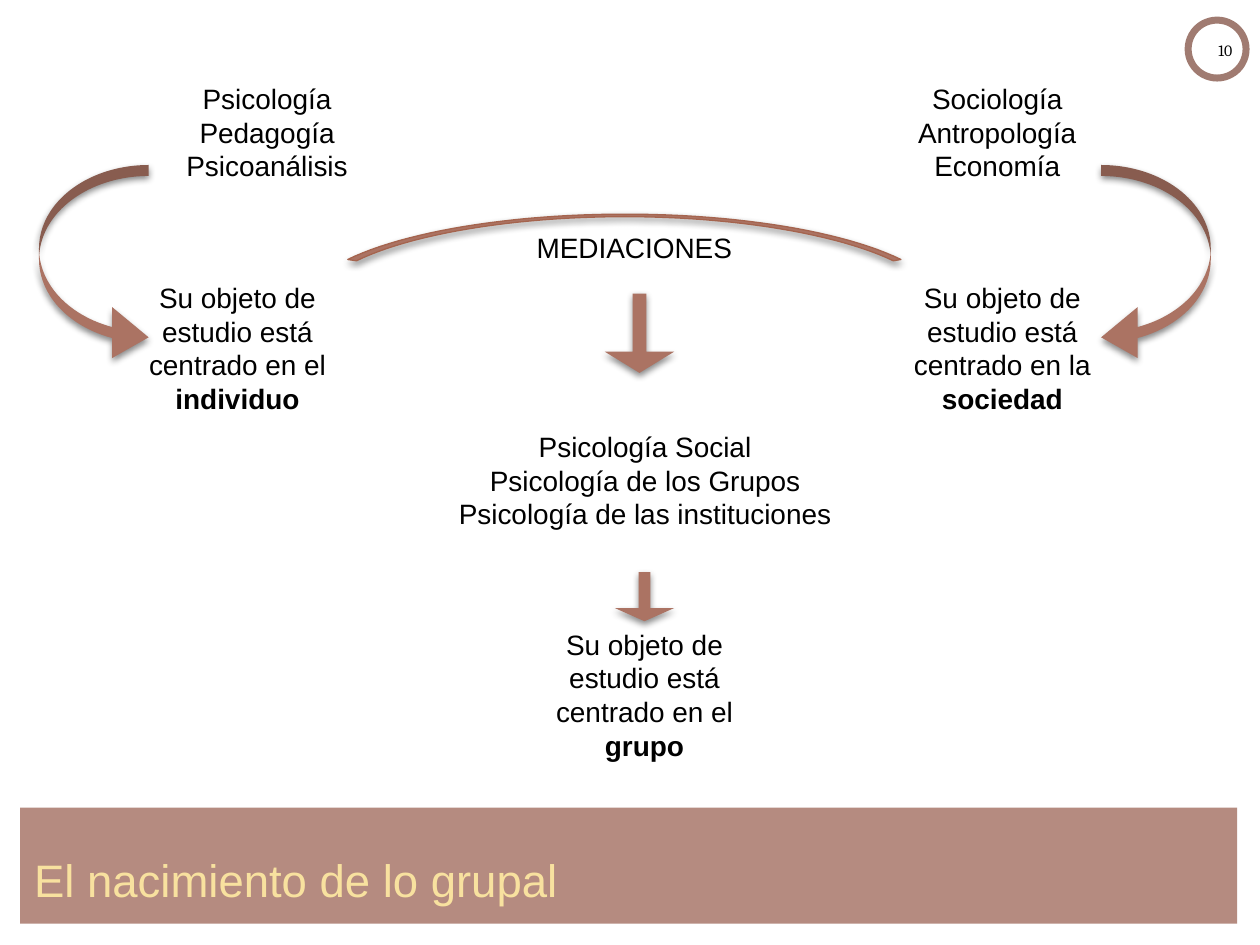
import pptx
import pptx.util
import pptx.dml.color
import pptx.enum.shapes
import pptx.enum.text
import pptx.oxml
import pptx.oxml.ns

Inches = pptx.util.Inches
Shapes = pptx.enum.shapes.MSO_SHAPE
Align = pptx.enum.text.PP_ALIGN
Anchor = pptx.enum.text.MSO_ANCHOR

CLAY, ROSE, BLACK = "AB7363", "B58B80", "000000"
SHADOW = (
    f'<a:effectLst {pptx.oxml.ns.nsdecls("a")}>'
    '<a:outerShdw blurRad="50800" dist="25400" dir="5400000" rotWithShape="0">'
    '<a:srgbClr val="000000"><a:alpha val="45000"/></a:srgbClr>'
    '</a:outerShdw></a:effectLst>'
)


def color(value):
    return pptx.dml.color.RGBColor.from_string(value)


def apply(target, values):
    for name, value in values.items():
        setattr(target, name, value)


def curve(points, steps=24):
    weights = (1, 3, 3, 1)
    for step in range(steps + 1):
        t = step / steps
        yield tuple(
            sum(w * (1 - t) ** (3 - i) * t ** i * point[axis]
                for i, (w, point) in enumerate(zip(weights, points)))
            for axis in (0, 1)
        )


class Painter:
    body = {"size": pptx.util.Pt(16), "name": "Arial"}

    def __init__(self, page):
        self.page = page

    def paint(self, shape, fill, line=None, width=0.75, shadow=False):
        shape.shadow.inherit = False
        shape.fill.solid()
        shape.fill.fore_color.rgb = color(fill)
        if line:
            shape.line.color.rgb = color(line)
            shape.line.width = pptx.util.Pt(width)
        else:
            shape.line.fill.background()
        if shadow:
            properties = shape._element.spPr
            properties.replace(
                properties.find(pptx.oxml.ns.qn("a:effectLst")),
                pptx.oxml.parse_xml(SHADOW))
        return shape

    def shape(self, kind, place, fill, **style):
        shape = self.page.shapes.add_shape(kind, *map(Inches, place))
        return self.paint(shape, fill, **style)

    def band(self, place, fill):
        band = self.shape(Shapes.RECTANGLE, place, fill)
        self.page.shapes.title._element.addprevious(band._element)

    def arrow(self, kind, place, adjustments, rotation=0, flip=False):
        arrow = self.shape(kind, place, CLAY, shadow=True)
        for index, value in enumerate(adjustments):
            arrow.adjustments[index] = value
        arrow.rotation = rotation
        if flip:
            arrow._element.spPr.xfrm.set("flipH", "1")

    def outline(self, points, fill, **style):
        corners = [tuple(map(Inches, point)) for point in points]
        builder = self.page.shapes.build_freeform(*corners[0])
        builder.add_line_segments(corners[1:], close=True)
        self.paint(builder.convert_to_shape(), fill, **style)

    def span(self, para, text, font=None, ink=BLACK, bold=False):
        span = para.add_run()
        span.text = text
        apply(span.font, {**self.body, **(font or {}), "bold": bold})
        span.font.color.rgb = color(ink)

    def text(self, place, lines, align=Align.CENTER, font=None, frame=None):
        box = self.page.shapes.add_textbox(*map(Inches, place))
        apply(box.text_frame, {"word_wrap": True, **(frame or {})})
        for number, line in enumerate(lines):
            para = box.text_frame.add_paragraph() if number else box.text_frame.paragraphs[0]
            para.alignment = align
            for index, words in enumerate(line):
                self.span(para, words, font, bold=index > 0)

    def title(self, place, words):
        title = self.page.shapes.title
        sides = map(Inches, place)
        apply(title, dict(zip(("left", "top", "width", "height"), sides)))
        apply(title.text_frame, {"word_wrap": True, "vertical_anchor": Anchor.MIDDLE})
        para = title.text_frame.paragraphs[0]
        para.alignment = Align.LEFT
        self.span(para, words, {"size": pptx.util.Pt(26)}, "F8E19F")


def main():
    deck = pptx.Presentation()
    apply(deck, {"slide_width": Inches(10), "slide_height": Inches(7.5)})
    painter = Painter(deck.slides.add_slide(deck.slide_layouts[5]))

    painter.band((0.16, 6.41, 9.66, 0.92), ROSE)
    painter.shape(Shapes.OVAL, (9.43, 0.16, 0.46, 0.46), "FFFFFF", line="A07B71", width=4)
    painter.title((0.17, 6.68, 9.64, 0.6), "El nacimiento de lo grupal")

    lists = [
        ((1.02, 0.6, 2.2, 0.9), ("Psicología", "Pedagogía", "Psicoanálisis")),
        ((6.93, 0.6, 1.97, 0.9), ("Sociología", "Antropología", "Economía")),
        ((4.01, 1.78, 2.05, 0.37), ("MEDIACIONES",)),
        ((3.27, 3.36, 3.7, 0.9),
         ("Psicología Social", "Psicología de los Grupos", "Psicología de las instituciones")),
    ]
    for place, lines in lists:
        painter.text(place, [(line,) for line in lines])

    objects = [
        (0.86, 2.18, "el", "individuo"),
        (6.93, 2.18, "la", "sociedad"),
        (4.09, 4.93, "el", "grupo"),
    ]
    for left, top, article, subject in objects:
        sentence = f"Su objeto de estudio está centrado en {article} "
        painter.text((left, top, 2.05, 1.17), [(sentence, subject)])

    inner = [(2.83, 2.07), (3.26, 1.86), (4.07, 1.72), (4.96, 1.72)]
    inner_right = [(4.96, 1.72), (5.84, 1.72), (6.65, 1.86), (7.09, 2.07)]
    outer_right = [(7.15, 2.06), (6.7, 1.84), (5.87, 1.7), (4.96, 1.7)]
    outer = [(4.96, 1.7), (4.05, 1.7), (3.21, 1.84), (2.76, 2.06)]
    arc = [point for part in (inner, inner_right, outer_right, outer) for point in curve(part)]
    painter.outline(arc, CLAY, line="A5644E", shadow=True)

    for left, flip in ((0.31, False), (8.74, True)):
        painter.arrow(Shapes.CURVED_RIGHT_ARROW, (left, 1.31, 0.87, 1.57),
                      (0.1, 0.465, 0.333), flip=flip)
    for place, head in (((4.76, 2.37, 0.63, 0.55), 0.305), ((4.92, 4.5, 0.39, 0.47), 0.267)):
        painter.arrow(Shapes.RIGHT_ARROW, place, (0.197, head), rotation=90)

    margins = dict.fromkeys(
        ("margin_left", "margin_top", "margin_right", "margin_bottom"), Inches(0.05))
    painter.text((9.33, 0.04, 0.5, 0.48), [("10",)], Align.RIGHT,
                 {"size": pptx.util.Pt(9), "name": "Cambria"},
                 {**margins, "vertical_anchor": Anchor.BOTTOM})

    deck.save("out.pptx")


if __name__ == "__main__":
    main()
